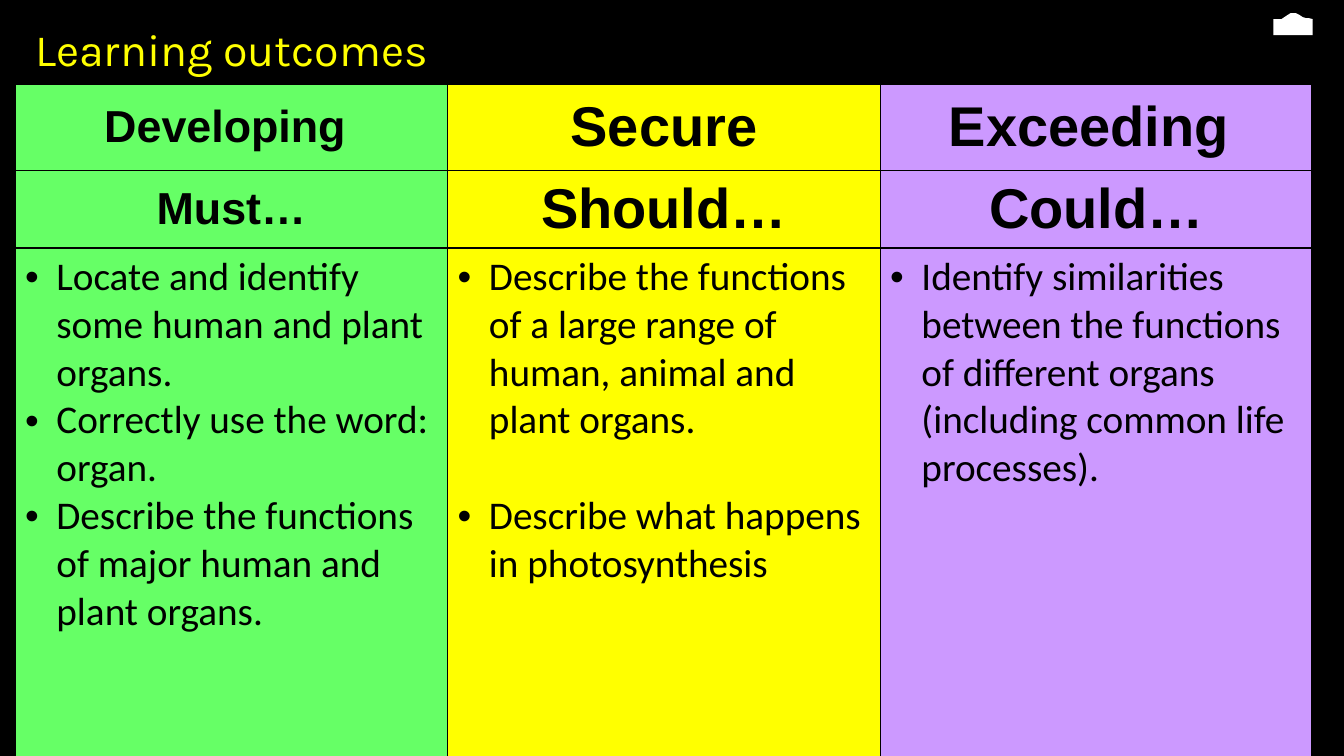
"""Build the learning outcomes slide with its three-level table."""
from pptx import Presentation
from pptx.dml.color import RGBColor
from pptx.enum.shapes import MSO_SHAPE
from pptx.enum.text import MSO_ANCHOR, PP_ALIGN
from pptx.oxml import parse_xml
from pptx.oxml.ns import nsdecls
from pptx.util import Inches, Pt

HUES = {"black": "000000", "white": "FFFFFF", "yellow": "FFFF00",
        "green": "66FF66", "violet": "CC99FF"}
LEVELS = [
    ("green", 32, "Developing ", "Must…", [
        "Locate and identify some human and plant organs.",
        "Correctly use the word: organ.",
        "Describe the functions of major human and plant organs."], 0),
    ("yellow", 40, "Secure", "Should…", [
        "Describe the functions of a large range of human, animal and plant organs.",
        "Describe what happens in photosynthesis"], 34),
    ("violet", 40, "Exceeding ", "Could…", [
        "Identify similarities between the functions of different organs "
        "(including common life processes)."], 0),
]
ROWS = [0.86, 0.77, 6.23]
COL = 4.29


def paint(fill, hue):
    fill.solid()
    fill.fore_color.rgb = RGBColor.from_string(HUES[hue])


def style(para, face, size, hue, bold=False):
    font = para.font
    font.name, font.size, font.bold = face, Pt(size), bold
    font.color.rgb = RGBColor.from_string(HUES[hue])


deck = Presentation()
deck.slide_width, deck.slide_height = Inches(13.33), Inches(7.5)
slide = deck.slides.add_slide(deck.slide_layouts[6])
paint(slide.background.fill, "black")
shapes = slide.shapes

title = shapes.add_textbox(Inches(0.22), Inches(0.15), Inches(9.57), Inches(0.67)).text_frame
title.word_wrap = True
title.margin_left = title.margin_right = Inches(0.13)
title.margin_top = title.margin_bottom = Inches(0.07)
title.text = "Learning outcomes"
style(title.paragraphs[0], "Karla", 32, "yellow")

table = shapes.add_table(len(ROWS), len(LEVELS), Inches(0.15), Inches(0.83),
                         Inches(COL * len(LEVELS)), Inches(sum(ROWS))).table
table.first_row = table.horz_banding = False
for row, height in zip(table.rows, ROWS):
    row.height = Inches(height)

for x, (hue, size, level, verb, goals, gap) in enumerate(LEVELS):
    table.columns[x].width = Inches(COL)
    for y, lines in enumerate([[level], [verb], goals]):
        cell = table.cell(y, x)
        paint(cell.fill, hue)
        edges = {"L": x == 0, "R": x == len(LEVELS) - 1,
                 "T": y == 0, "B": y == len(ROWS) - 1}
        for spot, (side, outer) in enumerate(edges.items()):
            width = Pt(2.25 if outer else 1)
            cell._tc.get_or_add_tcPr().insert(spot, parse_xml(
                f'<a:ln{side} {nsdecls("a")} w="{width}"><a:solidFill>'
                f'<a:srgbClr val="{HUES["black"]}"/></a:solidFill></a:ln{side}>'))
        cell.text = "\n".join(lines)
        for spot, para in enumerate(cell.text_frame.paragraphs):
            if y < 2:
                cell.vertical_anchor = MSO_ANCHOR.MIDDLE
                para.alignment = PP_ALIGN.CENTER
                style(para, "Arial", size, "black", True)
                continue
            props = para._p.get_or_add_pPr()
            props.set("marL", str(Inches(0.31)))
            props.set("indent", str(-Inches(0.31)))
            props.append(parse_xml(f'<a:buFont {nsdecls("a")} typeface="Arial"/>'))
            props.append(parse_xml(f'<a:buChar {nsdecls("a")} char="•"/>'))
            if spot and gap:
                para.space_before = Pt(gap)
            style(para, "Calibri", 28, "black")

base = shapes.add_shape(MSO_SHAPE.RECTANGLE, Inches(12.63), Inches(0.19),
                        Inches(0.39), Inches(0.16))
dome = [(1264, 19), (1271, 19), (1277, 15), (1280, 13), (1285, 13),
        (1289, 15), (1292, 17), (1295, 18), (1298, 18), (1302, 19)]
curve = shapes.build_freeform(*dome[0], scale=Inches(0.01))
curve.add_line_segments(dome[1:])
for part in (base, curve.convert_to_shape()):
    part.shadow.inherit = False
    paint(part.fill, "white")
    part.line.fill.background()

deck.save("out.pptx")
